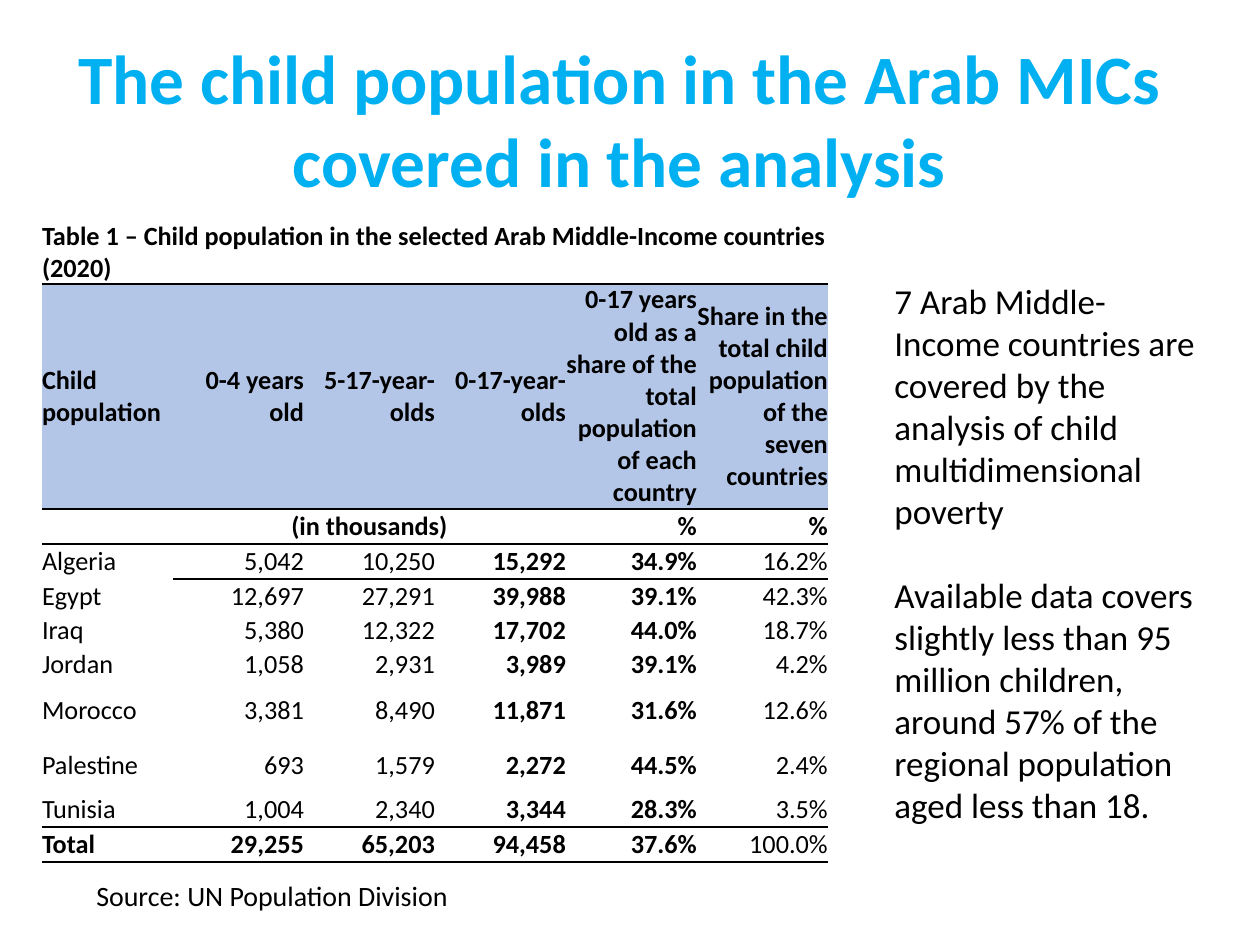
from lxml import etree
from pptx import Presentation
from pptx.dml.color import RGBColor
from pptx.enum.text import MSO_ANCHOR, PP_ALIGN
from pptx.oxml.ns import qn
from pptx.util import Pt

PX = 914400 // 126
LEFT, CENTER, RIGHT = PP_ALIGN.LEFT, PP_ALIGN.CENTER, PP_ALIGN.RIGHT
MIDDLE, TOP = MSO_ANCHOR.MIDDLE, MSO_ANCHOR.TOP
BLACK = RGBColor(0x00, 0x00, 0x00)
SKY = RGBColor(0x00, 0xB0, 0xF0)
HEADER_BLUE = RGBColor(0xB4, 0xC6, 0xE7)
FONT = "Calibri"
NO_GRID_STYLE = "{2D5ABB26-0587-4C30-8999-92F81FD0307C}"

TITLE = "The child population in the Arab MICs covered in the analysis"
FINDINGS = [
    "7 Arab Middle- Income countries are covered by the analysis of child multidimensional poverty",
    "Available data covers slightly less than 95 million children, around 57% of the regional population aged less than 18.",
]
SOURCE = "Source: UN Population Division"
CAPTION = "Table 1 – Child population in the selected Arab Middle-Income countries (2020)"
HEADINGS = ["Child population", "0-4 years old", "5-17-year-olds", "0-17-year-olds",
            "0-17 years old as a share of the total population of each country",
            "Share in the total child population of the seven countries"]
UNITS = ["", "(in thousands)", "", "", "%", "%"]
COUNTRIES = [
    ["Algeria", "5,042", "10,250", "15,292", "34.9%", "16.2%"],
    ["Egypt", "12,697", "27,291", "39,988", "39.1%", "42.3%"],
    ["Iraq", "5,380", "12,322", "17,702", "44.0%", "18.7%"],
    ["Jordan", "1,058", "2,931", "3,989", "39.1%", "4.2%"],
    ["Morocco", "3,381", "8,490", "11,871", "31.6%", "12.6%"],
    ["Palestine", "693", "1,579", "2,272", "44.5%", "2.4%"],
    ["Tunisia", "1,004", "2,340", "3,344", "28.3%", "3.5%"],
]
TOTAL = ["Total", "29,255", "65,203", "94,458", "37.6%", "100.0%"]
ROWS = [[CAPTION] + [""] * 5, HEADINGS, UNITS, *COUNTRIES, TOTAL]
ROW_HEIGHTS = [64, 225, 35, 35, 35, 34, 34, 58, 52, 35, 35]
COLUMN_WIDTH = 131
TABLE_LEFT, TABLE_TOP = 42, 220
TABLE_SIZE = 15
HEADING_ROW, UNIT_ROW, TOTAL_ROW = 1, 2, len(ROWS) - 1
RULED_ROWS = {0, HEADING_ROW, UNIT_ROW, TOTAL_ROW - 1, TOTAL_ROW}
BOLD_COLUMNS = {3, 4}


def write(paragraph, words, size, color=BLACK, bold=False, align=LEFT):
    paragraph.alignment = align
    run = paragraph.add_run()
    run.text = words
    look = {"name": FONT, "size": Pt(size), "bold": bold}
    for attribute, value in look.items():
        setattr(run.font, attribute, value)
    run.font.color.rgb = color


def add_text(slide, box, paragraphs, size, gap=0, anchor=TOP, **look):
    frame = slide.shapes.add_textbox(*(n * PX for n in box)).text_frame
    frame.word_wrap = True
    frame.vertical_anchor = anchor
    for index, words in enumerate(paragraphs):
        paragraph = frame.add_paragraph() if index else frame.paragraphs[0]
        paragraph.space_before = Pt(gap if index else 0)
        write(paragraph, words, size, **look)


def has_rule(row, column):
    return row in RULED_ROWS and (row, column) != (UNIT_ROW, 0)


def add_rule(cell, side, position):
    line = etree.Element(qn(f"a:{side}"), w=str(Pt(1)))
    fill = etree.SubElement(line, qn("a:solidFill"))
    etree.SubElement(fill, qn("a:srgbClr"), val=str(BLACK))
    cell._tc.get_or_add_tcPr().insert(position, line)


def is_bold(row, column):
    if row <= UNIT_ROW:
        return True
    return column in BOLD_COLUMNS or (row == TOTAL_ROW and column < 5)


def alignment(row, column):
    if (row, column) == (UNIT_ROW, 1):
        return CENTER
    return RIGHT if row and column else LEFT


def fill_cell(cell, row, column, words):
    layout = {"margin_left": 0, "margin_right": 0, "margin_top": 0,
              "margin_bottom": 0, "vertical_anchor": MIDDLE}
    for attribute, value in layout.items():
        setattr(cell, attribute, value)
    if row == HEADING_ROW:
        cell.fill.solid()
        cell.fill.fore_color.rgb = HEADER_BLUE
    else:
        cell.fill.background()
    paragraph = cell.text_frame.paragraphs[0]
    if words:
        write(paragraph, words, TABLE_SIZE, bold=is_bold(row, column),
              align=alignment(row, column))
    else:
        etree.SubElement(paragraph._p, qn("a:endParaRPr"), sz=str(TABLE_SIZE * 100))
    edges = [("lnT", has_rule(row - 1, column)), ("lnB", has_rule(row, column))]
    for position, side in enumerate(side for side, ruled in edges if ruled):
        add_rule(cell, side, position)


def add_population_table(slide):
    columns = len(HEADINGS)
    frame = slide.shapes.add_table(
        len(ROWS), columns, TABLE_LEFT * PX, TABLE_TOP * PX,
        columns * COLUMN_WIDTH * PX, sum(ROW_HEIGHTS) * PX)
    table = frame.table
    table.first_row = table.horz_banding = False
    for style in frame.element.iter(qn("a:tableStyleId")):
        style.text = NO_GRID_STYLE
    for column in table.columns:
        column.width = COLUMN_WIDTH * PX
    for row, height in zip(table.rows, ROW_HEIGHTS):
        row.height = height * PX
    table.cell(0, 0).merge(table.cell(0, columns - 1))
    table.cell(UNIT_ROW, 1).merge(table.cell(UNIT_ROW, 3))
    for row, entries in enumerate(ROWS):
        for column, words in enumerate(entries):
            fill_cell(table.cell(row, column), row, column, words)


def main():
    deck = Presentation()
    deck.slide_width, deck.slide_height = 1260 * PX, 945 * PX
    slide = deck.slides.add_slide(deck.slide_layouts[6])
    add_text(slide, (42, 53, 1155, 130), [TITLE], 39.6, anchor=MIDDLE,
             color=SKY, bold=True, align=CENTER)
    add_population_table(slide)
    add_text(slide, (882, 273, 336, 564), FINDINGS, 20, gap=24)
    add_text(slide, (84, 872, 441, 47), [SOURCE], 16)
    deck.save("out.pptx")


if __name__ == "__main__":
    main()
